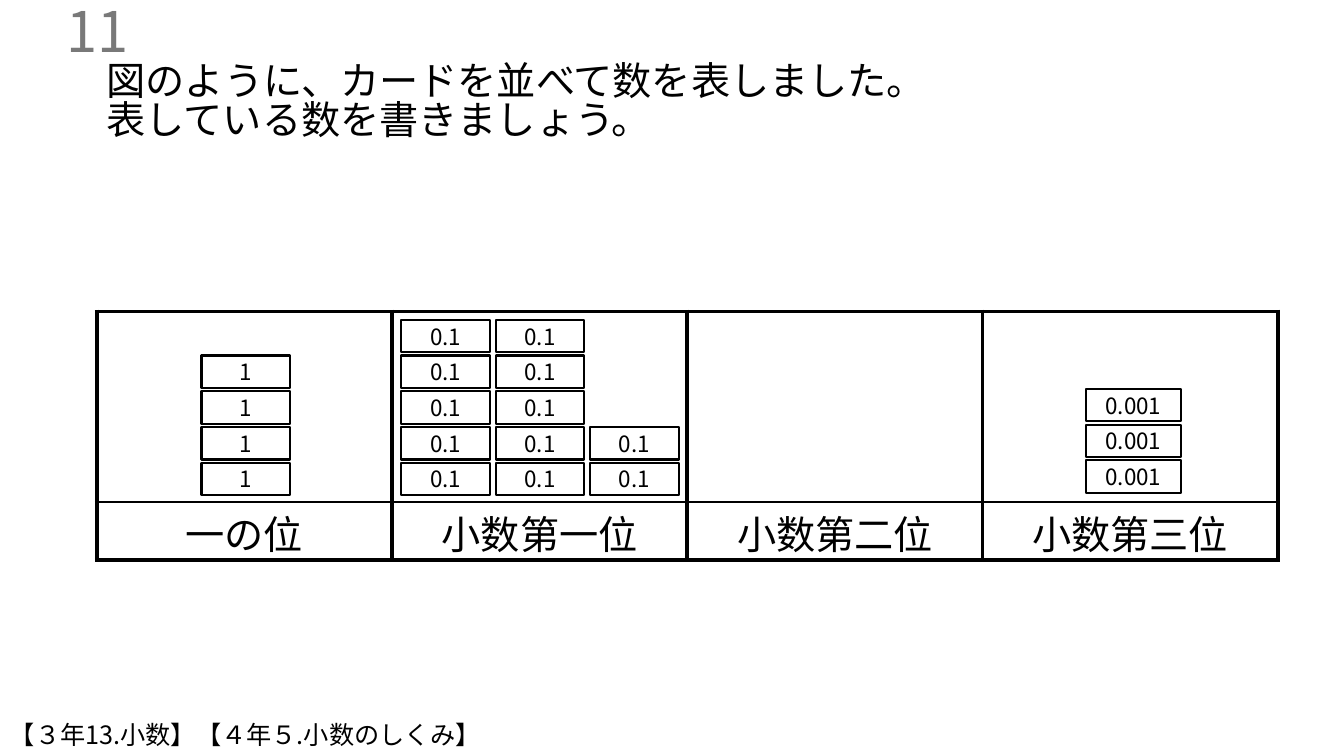
import pptx
import pptx.dml.color
import pptx.enum.shapes
import pptx.enum.text
import pptx.oxml
import pptx.oxml.ns
import pptx.util
from pptx.util import Cm

FONT = "Noto Sans CJK JP"
BLACK = "000000"
GREY = "797979"
PLACES = ["一の位", "小数第一位", "小数第二位", "小数第三位"]
CARD_HEIGHT = 0.82
CARD_STEP = 0.9


def color(value):
    """Turn a hex string into a colour."""
    return pptx.dml.color.RGBColor.from_string(value)


def write(frame, lines, size, align, ink=BLACK, spacing=None):
    """Write lines into a text frame, one paragraph each."""
    for index, line in enumerate(lines):
        para = frame.add_paragraph() if index else frame.paragraphs[0]
        para.text = line
        para.alignment = align
        para.line_spacing = spacing
        para.font.size = pptx.util.Pt(size)
        para.font.name = FONT
        para.font.color.rgb = color(ink)
        props = para.font._element
        east_asian = props.makeelement(pptx.oxml.ns.qn("a:ea"), {"typeface": FONT})
        props.find(pptx.oxml.ns.qn("a:latin")).addnext(east_asian)


def add_text(page, left, top, width, height, lines, size, **style):
    """Add a wrapping text box."""
    box = page.shapes.add_textbox(Cm(left), Cm(top), Cm(width), Cm(height))
    box.text_frame.word_wrap = True
    style.setdefault("align", pptx.enum.text.PP_ALIGN.LEFT)
    write(box.text_frame, lines, size, **style)
    return box


def set_borders(cell, **widths):
    """Draw black borders of the given widths in points."""
    props = cell._tc.get_or_add_tcPr()
    for index, (side, width) in enumerate(widths.items()):
        props.insert(index, pptx.oxml.parse_xml(
            f'<a:{side} {pptx.oxml.ns.nsdecls("a")} w="{pptx.util.Pt(width)}">'
            f'<a:solidFill><a:srgbClr val="{BLACK}"/></a:solidFill></a:{side}>'))


def add_place_table(page):
    """Add the place value table with its labels in the bottom row."""
    frame = page.shapes.add_table(2, len(PLACES), Cm(2.44), Cm(7.85), Cm(29.76), Cm(6.27))
    table = frame.table
    table.first_row = table.horz_banding = False
    table.rows[0].height = Cm(4.8)
    table.rows[1].height = Cm(1.47)
    for column, place in enumerate(PLACES):
        cards_cell, label_cell = table.cell(0, column), table.cell(1, column)
        for cell in (cards_cell, label_cell):
            cell.fill.background()
            cell.vertical_anchor = pptx.enum.text.MSO_ANCHOR.MIDDLE
        set_borders(cards_cell, lnL=3, lnR=3, lnT=3, lnB=2.25)
        set_borders(label_cell, lnL=3, lnR=3, lnT=2.25, lnB=3)
        label_cell.margin_top = Cm(0.13)
        label_cell.margin_bottom = Cm(0)
        write(label_cell.text_frame, [place], 28, pptx.enum.text.PP_ALIGN.CENTER, spacing=0.9)


def add_card_stack(page, left, bottom_top, width, count, label):
    """Stack number cards upwards from the lowest one."""
    for level in range(count):
        card = page.shapes.add_shape(
            pptx.enum.shapes.MSO_SHAPE.RECTANGLE, Cm(left),
            Cm(bottom_top - level * CARD_STEP), Cm(width), Cm(CARD_HEIGHT))
        card.shadow.inherit = False
        card.fill.background()
        card.line.color.rgb = color(BLACK)
        card.line.width = pptx.util.Pt(1.5)
        card.text_frame.vertical_anchor = pptx.enum.text.MSO_ANCHOR.MIDDLE
        write(card.text_frame, [label], 16, pptx.enum.text.PP_ALIGN.CENTER)


def main():
    """Build the slide and save it."""
    deck = pptx.Presentation()
    deck.slide_width, deck.slide_height = Cm(33.87), Cm(19.05)
    page = deck.slides.add_slide(deck.slide_layouts[6])
    add_text(page, 2.44, 1.5, 29.29, 2.64,
             ["図のように、カードを並べて数を表しました。", "表している数を書きましょう。"],
             28, spacing=0.83)
    number = add_text(page, -4.14, 0.25, 7.62, 1.02, ["11"], 40,
                      align=pptx.enum.text.PP_ALIGN.RIGHT, ink=GREY)
    number.text_frame.vertical_anchor = pptx.enum.text.MSO_ANCHOR.MIDDLE
    add_place_table(page)
    add_card_stack(page, 5.08, 11.66, 2.24, 4, "1")
    for column, count in enumerate([5, 5, 2]):
        add_card_stack(page, 10.11 + column * 2.38, 11.66, 2.24, count, "0.1")
    add_card_stack(page, 27.36, 11.6, 2.41, 3, "0.001")
    add_text(page, 0, 18.01, 19.02, 1.02, ["【３年13.小数】【４年５.小数のしくみ】"], 18)
    deck.save("out.pptx")


if __name__ == "__main__":
    main()
